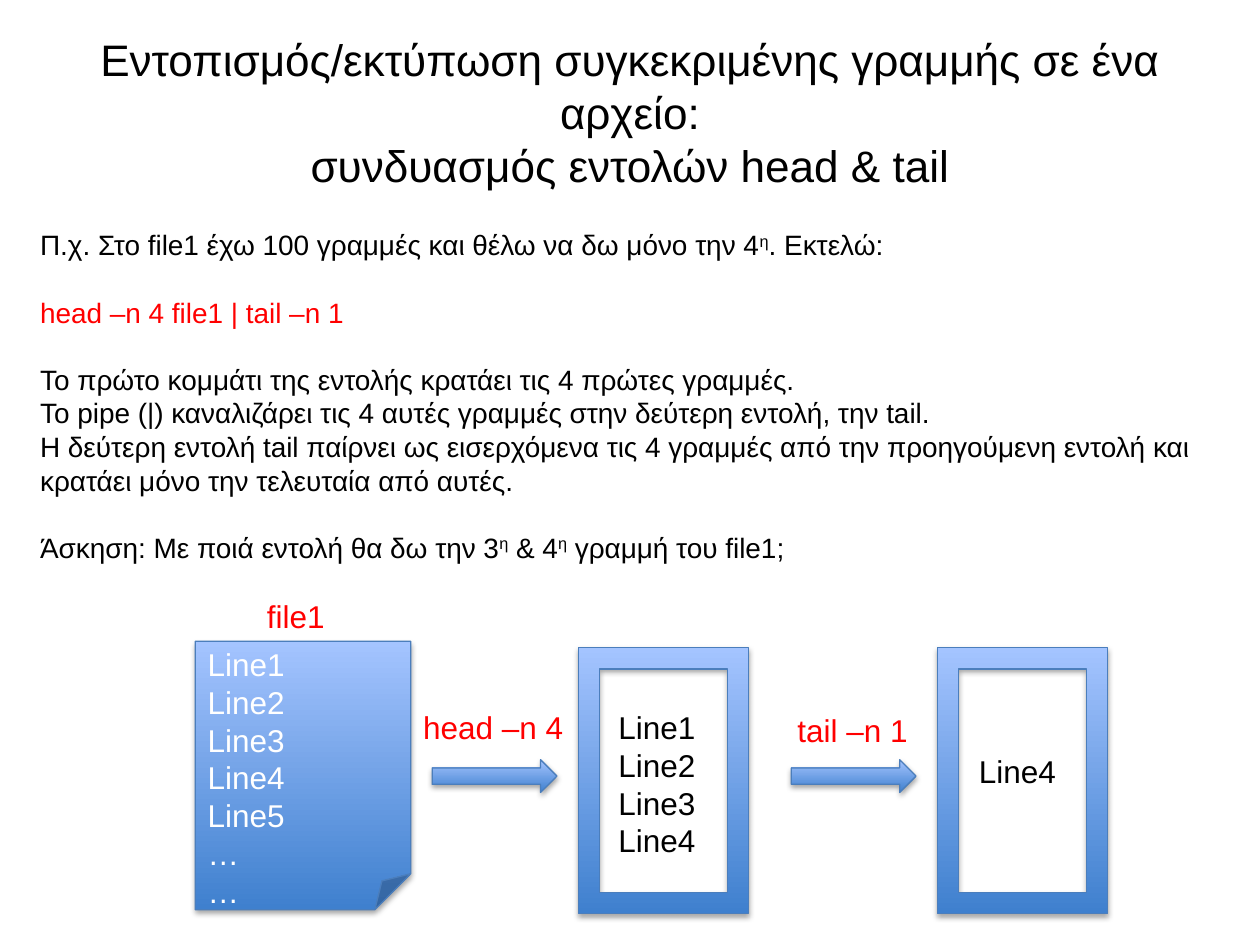
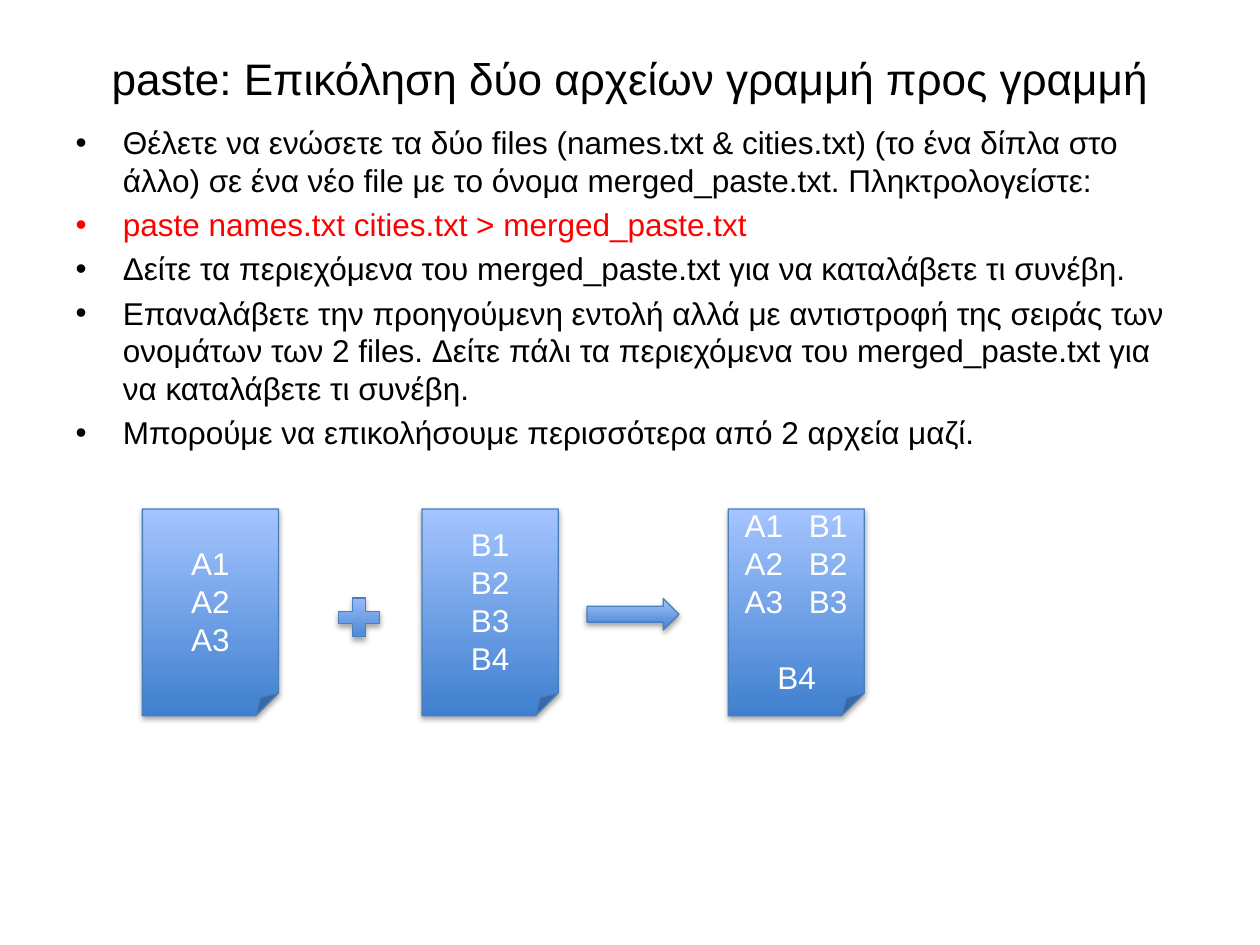
from dataclasses import dataclass
from typing import Optional

from lxml.etree import SubElement
from pptx import Presentation
from pptx.dml.color import RGBColor
from pptx.enum.shapes import MSO_SHAPE
from pptx.enum.text import MSO_ANCHOR, MSO_AUTO_SIZE, PP_ALIGN
from pptx.oxml.ns import qn
from pptx.util import Inches, Pt

BLACK = RGBColor(0x00, 0x00, 0x00)
WHITE = RGBColor(0xFF, 0xFF, 0xFF)
RED = RGBColor(0xFF, 0x00, 0x00)
DEEP_BLUE = RGBColor(0x3F, 0x80, 0xCE)
PALE_BLUE = RGBColor(0xA4, 0xC4, 0xFF)
EDGE_BLUE = RGBColor(0x4B, 0x7E, 0xBC)
FONT = "Arial"
TITLE_SIZE, DIAGRAM_SIZE, NOTE_SIZE = 25.2, 18, 16
LINE_FACTOR = 1.2


@dataclass(frozen=True)
class Area:
    left: float
    top: float
    width: float
    height: float

    def lengths(self) -> tuple:
        return tuple(Inches(side) for side in (self.left, self.top, self.width, self.height))


@dataclass(frozen=True)
class Line:
    """One paragraph; a text that starts with ^ is superscript."""
    texts: tuple[str, ...]
    color: RGBColor = BLACK
    gap: Optional[float] = None
    tab: Optional[float] = None


@dataclass(frozen=True)
class Label:
    area: Area
    lines: tuple[Line, ...]
    size: float = DIAGRAM_SIZE
    wrap: bool = False


def plain(*texts: str, color: RGBColor = BLACK) -> tuple[Line, ...]:
    return tuple(Line((text,), color) for text in texts)


def add_span(para, text: str, size: float, color: RGBColor) -> None:
    span = para.add_run()
    span.text = text.removeprefix("^")
    span.font.name = FONT
    span.font.size = Pt(size)
    span.font.color.rgb = color
    if text.startswith("^"):
        span.font._element.set("baseline", "30000")


def write_lines(frame, lines: tuple[Line, ...], size: float, align=None) -> None:
    for index, line in enumerate(lines):
        para = frame.add_paragraph() if index else frame.paragraphs[0]
        if align is not None:
            para.alignment = align
        if line.tab is not None:
            stops = SubElement(para._p.get_or_add_pPr(), qn("a:tabLst"))
            SubElement(stops, qn("a:tab"), pos=str(Inches(line.tab)), algn="l")
        if index == 0:
            para.space_before = Pt(0)
        elif line.gap is not None:
            para.space_before = Pt(line.gap)
        for text in line.texts:
            add_span(para, text, size, line.color)


def place(box, area: Area) -> None:
    box.left, box.top, box.width, box.height = area.lengths()


def set_title(page, height: float, *rows: str) -> None:
    title = page.shapes.title
    place(title, Area(0.5, 0.3, 9, height))
    frame = title.text_frame
    frame.auto_size = MSO_AUTO_SIZE.NONE
    frame.vertical_anchor = MSO_ANCHOR.MIDDLE
    para = frame.paragraphs[0]
    para.alignment = PP_ALIGN.CENTER
    for index, row in enumerate(rows):
        if index:
            para.add_line_break()
        add_span(para, row, TITLE_SIZE, BLACK)


def add_label(page, label: Label) -> None:
    box = page.shapes.add_textbox(*label.area.lengths())
    box.text_frame.word_wrap = label.wrap
    box.text_frame.auto_size = MSO_AUTO_SIZE.SHAPE_TO_FIT_TEXT
    write_lines(box.text_frame, label.lines, label.size)


def add_glossy(page, kind: MSO_SHAPE, area: Area):
    """Add a shape with the blue gradient, thin edge and soft shadow below."""
    shape = page.shapes.add_shape(kind, *area.lengths())
    shape.fill.gradient()
    shape.fill.gradient_angle = 90
    for stop, color in zip(shape.fill.gradient_stops, (DEEP_BLUE, PALE_BLUE)):
        stop.color.rgb = color
    shape.line.color.rgb = EDGE_BLUE
    shape.line.width = Pt(0.75)
    shape.shadow.inherit = False
    effects = shape._element.spPr.find(qn("a:effectLst"))
    shadow = SubElement(effects, qn("a:outerShdw"), blurRad="40000", dist="23000",
                        dir="5400000", rotWithShape="0")
    tone = SubElement(shadow, qn("a:srgbClr"), val=str(BLACK))
    SubElement(tone, qn("a:alpha"), val="35000")
    return shape


def add_sheet(page, area: Area, lines: tuple[Line, ...], align=PP_ALIGN.CENTER):
    """Add a folded sheet that stands for a file and return its text frame."""
    frame = add_glossy(page, MSO_SHAPE.FOLDED_CORNER, area).text_frame
    frame.word_wrap = True
    frame.vertical_anchor = MSO_ANCHOR.MIDDLE
    write_lines(frame, lines, DIAGRAM_SIZE, align)
    return frame


def build_head_tail(deck) -> None:
    page = deck.slides.add_slide(deck.slide_layouts[5])
    set_title(page, 1.18, "Εντοπισμός/εκτύπωση συγκεκριμένης γραμμής σε ένα αρχείο:",
              "συνδυασμός εντολών head & tail")
    gap = NOTE_SIZE * LINE_FACTOR
    explanation = (
        Line(("Π.χ. Στο file1 έχω 100 γραμμές και θέλω να δω μόνο την 4", "^η", ". Εκτελώ:")),
        Line(("head –n 4 file1 | tail –n 1",), RED, gap),
        Line(("Το πρώτο κομμάτι της εντολής κρατάει τις 4 πρώτες γραμμές.",), gap=gap),
        Line(("Το pipe (|) καναλιζάρει τις 4 αυτές γραμμές στην δεύτερη εντολή, την tail.",)),
        Line(("Η δεύτερη εντολή tail παίρνει ως εισερχόμενα τις 4 γραμμές από την "
              "προηγούμενη εντολή και κρατάει μόνο την τελευταία από αυτές.",)),
        Line(("Άσκηση: Με ποιά εντολή θα δω την 3", "^η", " & 4", "^η",
              " γραμμή του file1;"), gap=gap),
    )
    add_label(page, Label(Area(0.22, 1.76, 9.6, 2.79), explanation, NOTE_SIZE, True))

    numbered = [f"Line{number}" for number in range(1, 6)]
    sheet = add_sheet(page, Area(1.55, 5.09, 1.71, 2.13),
                      plain(*numbered, "…", "…", color=WHITE), PP_ALIGN.LEFT)
    sheet.vertical_anchor = MSO_ANCHOR.TOP
    sheet.margin_top = Inches(0.03)
    sheet.margin_bottom = Inches(0)

    for step in range(2):
        shift = step * 2.85
        add_glossy(page, MSO_SHAPE.RIGHT_ARROW, Area(3.43 + shift, 6.03, 0.99, 0.26))
        add_glossy(page, MSO_SHAPE.FRAME, Area(4.59 + shift, 5.14, 1.35, 2.11))

    labels = (
        Label(Area(4.81, 5.57, 0.92, 1.31), plain(*numbered[:4]), wrap=True),
        Label(Area(7.67, 5.92, 0.92, 0.4), plain(numbered[3]), wrap=True),
        Label(Area(3.26, 5.57, 1.32, 0.4), plain("head –n 4", color=RED)),
        Label(Area(6.23, 5.59, 1.09, 0.4), plain("tail –n 1", color=RED)),
        Label(Area(2.02, 4.69, 0.67, 0.4), plain("file1", color=RED)),
    )
    for label in labels:
        add_label(page, label)


def build_paste(deck) -> None:
    page = deck.slides.add_slide(deck.slide_layouts[1])
    set_title(page, 0.63, "paste: Επικόληση δύο αρχείων γραμμή προς γραμμή")
    body = page.placeholders[1]
    place(body, Area(0.5, 0.93, 9, 2.69))
    body.text_frame.auto_size = MSO_AUTO_SIZE.NONE
    steps = (
        *plain("Θέλετε να ενώσετε τα δύο files (names.txt & cities.txt) (το ένα δίπλα στο "
               "άλλο) σε ένα νέο file με το όνομα merged_paste.txt. Πληκτρολογείστε:"),
        *plain("paste names.txt cities.txt > merged_paste.txt", color=RED),
        *plain("Δείτε τα περιεχόμενα του merged_paste.txt για να καταλάβετε τι συνέβη.",
               "Επαναλάβετε την προηγούμενη εντολή αλλά με αντιστροφή της σειράς των "
               "ονομάτων των 2 files. Δείτε πάλι τα περιεχόμενα του merged_paste.txt για "
               "να καταλάβετε τι συνέβη.",
               "Μπορούμε να επικολήσουμε περισσότερα από 2 αρχεία μαζί."),
    )
    write_lines(body.text_frame, steps, DIAGRAM_SIZE)

    names = [f"A{row}" for row in range(1, 4)]
    cities = [f"B{row}" for row in range(1, 5)]
    for left, cells in ((1.13, names), (3.35, cities)):
        add_sheet(page, Area(left, 4.04, 1.08, 1.64), plain(*cells, color=WHITE))

    pairs = tuple(Line((f"{name}\t{city}",), WHITE, tab=0.51)
                  for name, city in zip(names, cities))
    unpaired = Line((f"\t{cities[-1]}",), WHITE, DIAGRAM_SIZE * LINE_FACTOR, 0.26)
    merged = add_sheet(page, Area(5.78, 4.04, 1.08, 1.64), (*pairs, unpaired), PP_ALIGN.LEFT)
    merged.margin_left = Inches(0.13)
    merged.margin_right = Inches(0.05)

    add_glossy(page, MSO_SHAPE.RIGHT_ARROW, Area(4.66, 4.75, 0.73, 0.25))
    add_glossy(page, MSO_SHAPE.MATH_PLUS, Area(2.63, 4.69, 0.44, 0.42))


def main() -> None:
    deck = Presentation()
    deck.slide_width, deck.slide_height = Inches(10), Inches(7.5)
    build_head_tail(deck)
    build_paste(deck)
    deck.save("out.pptx")


if __name__ == "__main__":
    main()
